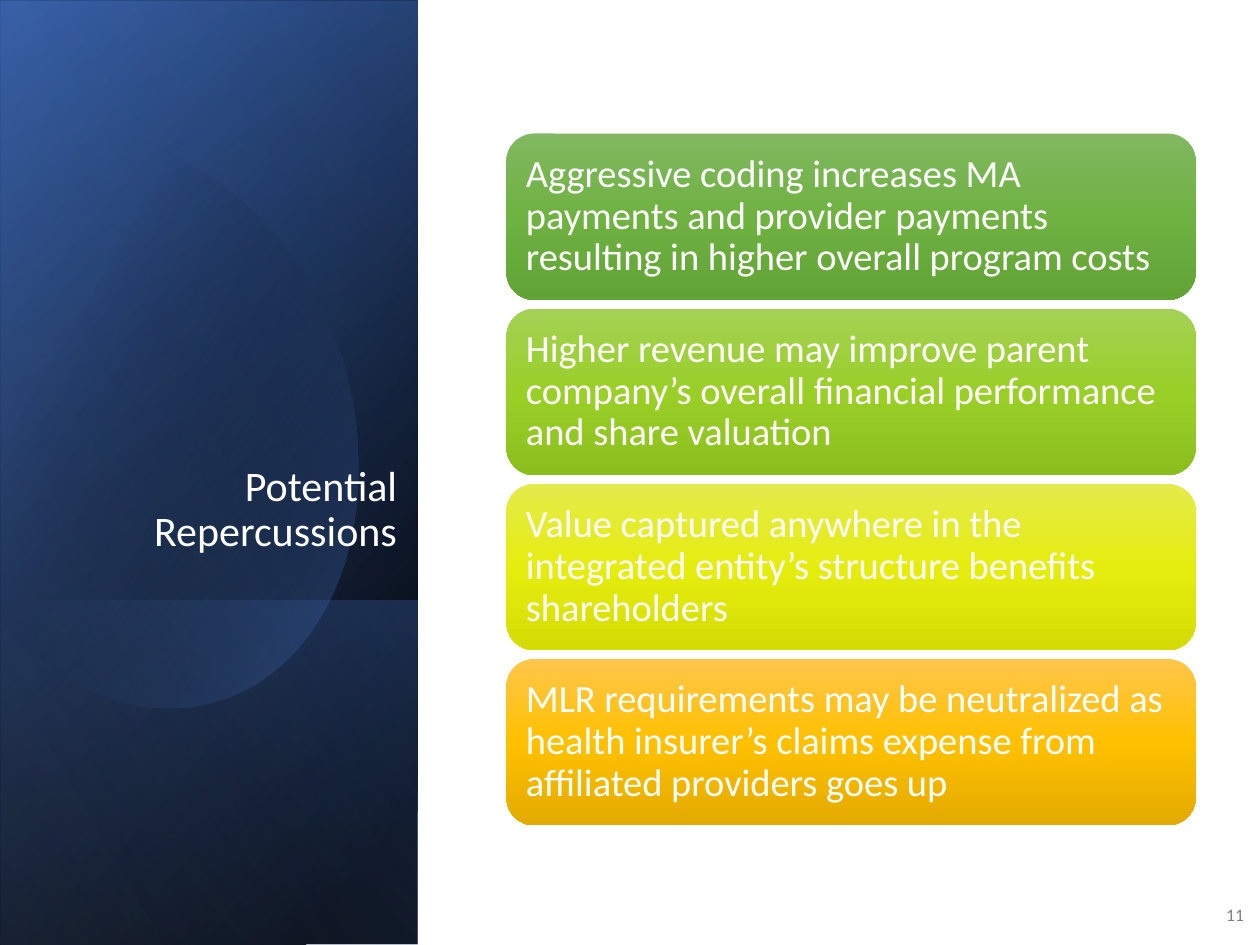
from dataclasses import dataclass

from lxml import etree
from pptx import Presentation
from pptx.dml.color import RGBColor
from pptx.enum.shapes import MSO_SHAPE as Preset
from pptx.enum.text import MSO_ANCHOR as Anchor, PP_ALIGN as Align
from pptx.oxml.ns import qn
from pptx.util import Inches, Pt


@dataclass(frozen=True)
class Theme:
    font: str = "Calibri"
    black: str = "000000"
    navy: str = "2F5597"
    blue: str = "4472C4"
    pale_blue: str = "8FAADC"
    white: str = "FFFFFF"
    gray: str = "808080"
    title_size: int = 24
    body_size: int = 22
    number_size: int = 10


theme = Theme()


def paint_gradient(shape, stops, angle):
    """Fill with (position %, colour, opacity %) stops, without line or shadow."""
    shape.shadow.inherit = False
    shape.line.fill.background()
    shape.fill.gradient()
    gradient = shape.element.spPr.find(qn("a:gradFill"))
    stop_list = gradient.find(qn("a:gsLst"))
    for old_stop in list(stop_list):
        stop_list.remove(old_stop)
    for position, color, opacity in stops:
        stop = etree.SubElement(stop_list, qn("a:gs"), pos=str(position * 1000))
        rgb = etree.SubElement(stop, qn("a:srgbClr"), val=color)
        if opacity < 100:
            etree.SubElement(rgb, qn("a:alpha"), val=str(opacity * 1000))
    gradient.find(qn("a:lin")).set("ang", str(angle * 60000))


def write_text(shape, text, size, color, align, anchor, spacing=None):
    frame = shape.text_frame
    frame.word_wrap = True
    frame.vertical_anchor = anchor
    paragraph = frame.paragraphs[0]
    paragraph.text = text
    paragraph.alignment = align
    paragraph.line_spacing = spacing
    paragraph.font.name = theme.font
    paragraph.font.size = Pt(size)
    paragraph.font.color.rgb = RGBColor.from_string(color)


prs = Presentation()
prs.slide_width, prs.slide_height = Inches(10), Inches(7.5)
slide = prs.slides.add_slide(prs.slide_layouts[6])
shapes = slide.shapes

# Side panel: layered gradients, each turned a quarter and mirrored
panel_layers = [
    (-2.09, 2.09, 7.5, [(8, theme.black, 100), (100, theme.navy, 100)], 50),
    (-2.09, 2.11, 7.5, [(0, theme.black, 0), (99, theme.blue, 46)], 30),
    (0.29, 4.48, 2.74, [(2, theme.blue, 29), (100, theme.black, 30)], 130),
    (-2.09, 2.09, 7.5, [(0, theme.black, 0), (99, theme.pale_blue, 11)], 120),
]
# The glow lies just below the last layer
glow_start = (0.96, 1.14)
glow_curves = [
    [(1.71, 1.22), (2.44, 1.92), (2.73, 2.9)],
    [(3.07, 4.12), (2.62, 5.31), (1.71, 5.57)],
    [(1.14, 5.74), (0.53, 5.5), (0.07, 5)],
    [(-0.03, 4.88)],
    [(-0.25, 1.66)],
    [(-0.15, 1.54)],
    [(0.02, 1.37), (0.22, 1.25), (0.45, 1.18)],
    [(0.62, 1.13), (0.79, 1.12), (0.96, 1.14)],
]
curve_steps = 24

for index, (left, top, length, stops, angle) in enumerate(panel_layers):
    if index == len(panel_layers) - 1:
        outline = [glow_start]
        for curve in glow_curves:
            if len(curve) == 1:
                outline += curve
                continue
            bezier = [outline[-1], *curve]
            for step in range(1, curve_steps + 1):
                t = step / curve_steps
                weights = ((1 - t) ** 3, 3 * t * (1 - t) ** 2,
                           3 * t ** 2 * (1 - t), t ** 3)
                outline.append(tuple(
                    sum(w * point[axis] for w, point in zip(weights, bezier))
                    for axis in (0, 1)))
        corners = [(Inches(x), Inches(y)) for x, y in outline]
        builder = shapes.build_freeform(*corners[0])
        builder.add_line_segments(corners[1:], close=True)
        glow = builder.convert_to_shape()
        paint_gradient(glow, [(29, theme.black, 0), (100, theme.blue, 43)], 30)
    layer = shapes.add_shape(Preset.RECTANGLE, Inches(left), Inches(top),
                             Inches(length), Inches(3.31))
    layer.rotation = 90
    layer.element.spPr.find(qn("a:xfrm")).set("flipH", "1")
    paint_gradient(layer, stops, angle)

# Title and slide number
title = shapes.add_textbox(Inches(0.26), Inches(1.84), Inches(2.99), Inches(2.62))
write_text(title, "Potential Repercussions", theme.title_size, theme.white,
           Align.RIGHT, Anchor.BOTTOM, 0.9)
slide_number = shapes.add_textbox(Inches(9.6), Inches(7.06), Inches(0.37), Inches(0.4))
write_text(slide_number, "11", theme.number_size, theme.gray,
           Align.RIGHT, Anchor.MIDDLE)

# Repercussions, stacked at an equal pitch
repercussions = [
    ("Aggressive coding increases MA payments and provider payments "
     "resulting in higher overall program costs", ("81B861", "6FB242", "62A336")),
    ("Higher revenue may improve parent company’s overall financial "
     "performance and share valuation", ("A4D155", "9ACF28", "8CBF1D")),
    ("Value captured anywhere in the integrated entity’s structure "
     "benefits shareholders", ("E4EB4D", "E5ED0E", "D4DC04")),
    ("MLR requirements may be neutralized as health insurer’s claims "
     "expense from affiliated providers goes up", ("FFC64B", "FFC000", "E3AB00")),
]
first_top, pitch = 1.06, 1.39
for row, (statement, shades) in enumerate(repercussions):
    card = shapes.add_shape(Preset.ROUNDED_RECTANGLE, Inches(4.02),
                            Inches(first_top + row * pitch), Inches(5.47), Inches(1.32))
    paint_gradient(card, [(50 * i, shade, 100) for i, shade in enumerate(shades)], 90)
    frame = card.text_frame
    frame.margin_left = frame.margin_right = Inches(0.09)
    frame.margin_top = frame.margin_bottom = Inches(0.09)
    write_text(card, statement, theme.body_size, theme.white,
               Align.LEFT, Anchor.MIDDLE, 0.9)

prs.save("out.pptx")
